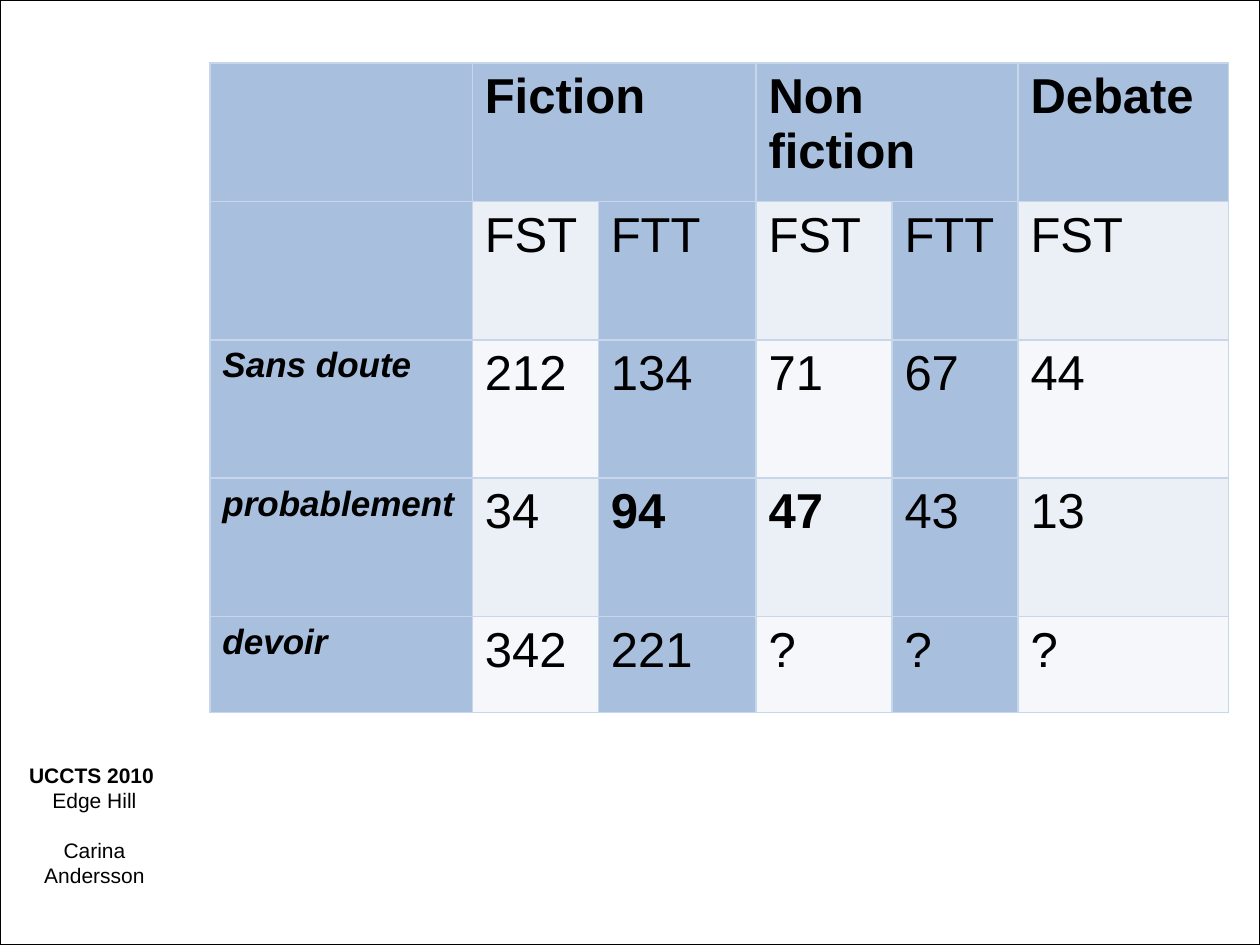
from dataclasses import dataclass

from lxml.etree import SubElement
from pptx import Presentation
from pptx.dml.color import RGBColor
from pptx.enum.shapes import MSO_SHAPE
from pptx.enum.text import PP_ALIGN
from pptx.oxml.ns import qn
from pptx.util import Cm, Pt


@dataclass(frozen=True)
class Theme:
    font: str = "Arial"
    ink: str = "000000"
    blue: str = "A8BFDE"
    light: str = "EBF0F7"
    pale: str = "F5F7FB"
    grid: str = "C7D6EA"
    figure: int = 28
    label: int = 20
    credit: int = 12


COLUMNS = [5.29, 2.54, 3.18, 2.74, 2.54, 4.24]
ROWS = [2.79] * 4 + [1.93]
COUNTS = [
    ["", "Fiction", "", "Non fiction", "", "Debate"],
    ["", "FST", "FTT", "FST", "FTT", "FST"],
    ["Sans doute", "212", "134", "71", "67", "44"],
    ["probablement", "34", "94", "47", "43", "13"],
    ["devoir", "342", "221", "?", "?", "?"],
]
HIGHLIGHTS = {(3, 2), (3, 3)}
CREDITS = [("UCCTS 2010 ", True, 0), ("Edge Hill", False, 0),
           ("Carina Andersson", False, 14)]


class SlideBuilder:
    def __init__(self, s, theme):
        self.s = s
        self.theme = theme

    def style(self, p, size, bold=False, italic=False):
        font = p.font
        font.name, font.size = self.theme.font, Pt(size)
        font.bold, font.italic = bold, italic
        font.color.rgb = RGBColor.from_string(self.theme.ink)

    def frame(self, width, height):
        sp = self.s.shapes.add_shape(MSO_SHAPE.RECTANGLE, 0, 0, width, height)
        sp.shadow.inherit = False
        sp.fill.background()
        sp.line.color.rgb = RGBColor.from_string(self.theme.ink)
        sp.line.width = Pt(0.75)

    def cell_borders(self, cell):
        """Borders must precede the fill in the cell properties."""
        props = cell._tc.get_or_add_tcPr()
        for side in ("a:lnL", "a:lnR", "a:lnT", "a:lnB"):
            ln = SubElement(props, qn(side), w=str(Pt(1)))
            fill = SubElement(ln, qn("a:solidFill"))
            SubElement(fill, qn("a:srgbClr"), val=self.theme.grid)

    def cell_fill(self, row, col):
        """Header, label and FTT cells are blue; the others band by row."""
        if row == 0 or col % 2 == 0:
            return self.theme.blue
        return self.theme.light if row % 2 else self.theme.pale

    def table(self, left, top):
        tbl = self.s.shapes.add_table(
            len(ROWS), len(COLUMNS), left, top,
            Cm(sum(COLUMNS)), Cm(sum(ROWS))).table
        for column, width in zip(tbl.columns, COLUMNS):
            column.width = Cm(width)
        for row, height in zip(tbl.rows, ROWS):
            row.height = Cm(height)
        for i, values in enumerate(COUNTS):
            for j, text in enumerate(values):
                cell = tbl.cell(i, j)
                self.cell_borders(cell)
                cell.fill.solid()
                cell.fill.fore_color.rgb = RGBColor.from_string(self.cell_fill(i, j))
                cell.text = text
                label = j == 0 and i > 1
                self.style(cell.text_frame.paragraphs[0],
                           self.theme.label if label else self.theme.figure,
                           bold=label or i == 0 or (i, j) in HIGHLIGHTS,
                           italic=label)
        for col in (1, 3):
            tbl.cell(0, col).merge(tbl.cell(0, col + 1))

    def credits(self, left, top, width, height):
        tf = self.s.shapes.add_textbox(left, top, width, height).text_frame
        tf.word_wrap = True
        for i, (text, bold, gap) in enumerate(CREDITS):
            p = tf.add_paragraph() if i else tf.paragraphs[0]
            p.text = text
            p.alignment = PP_ALIGN.CENTER
            if gap:
                p.space_before = Pt(gap)
            self.style(p, self.theme.credit, bold)


def main():
    prs = Presentation()
    prs.slide_width, prs.slide_height = Cm(25.4), Cm(19.05)
    s = prs.slides.add_slide(prs.slide_layouts[6])
    builder = SlideBuilder(s, Theme())
    builder.frame(prs.slide_width, prs.slide_height)
    builder.table(Cm(4.23), Cm(1.27))
    builder.credits(Cm(0), Cm(15.24), Cm(3.81), Cm(3.39))
    prs.save("out.pptx")


if __name__ == "__main__":
    main()
